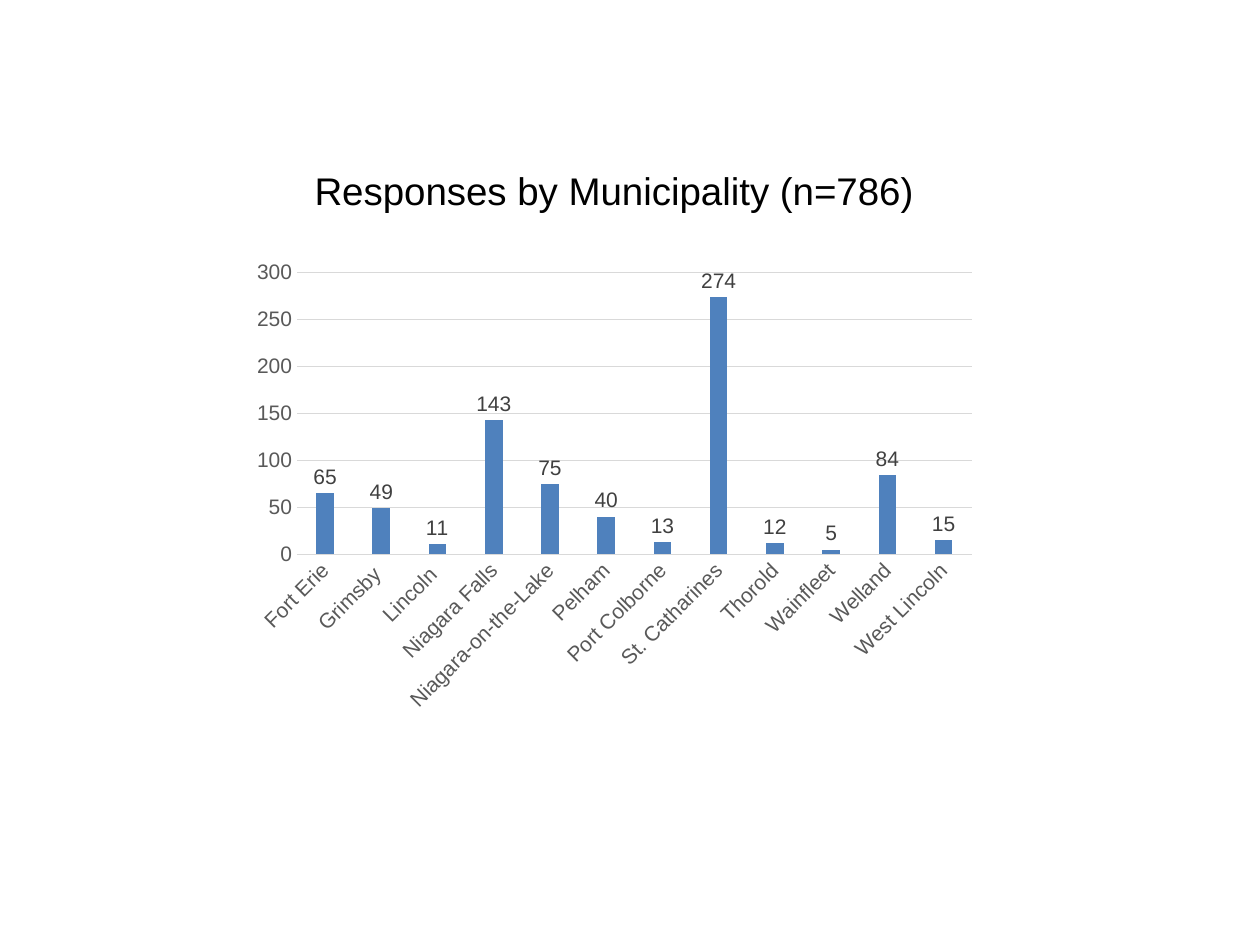
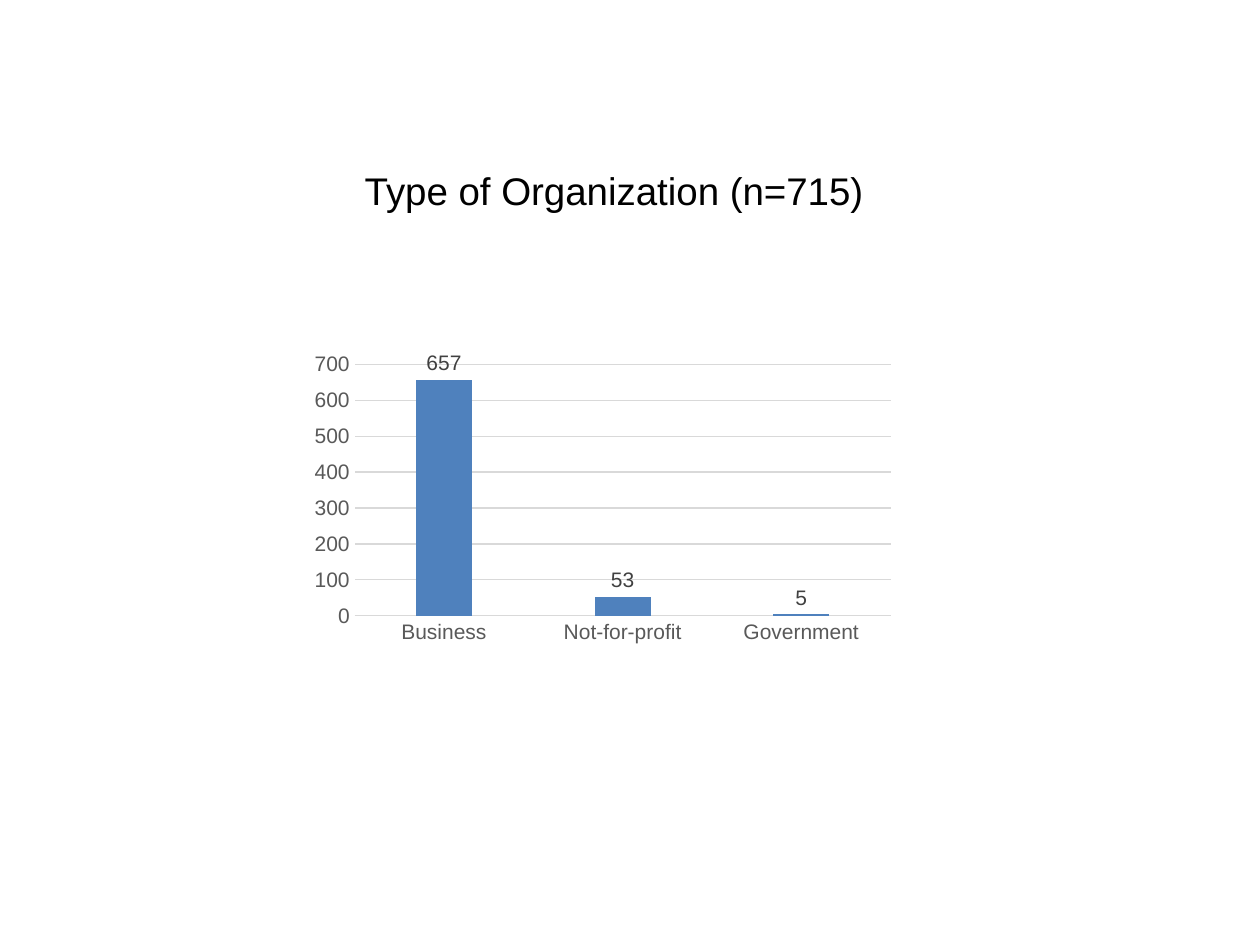
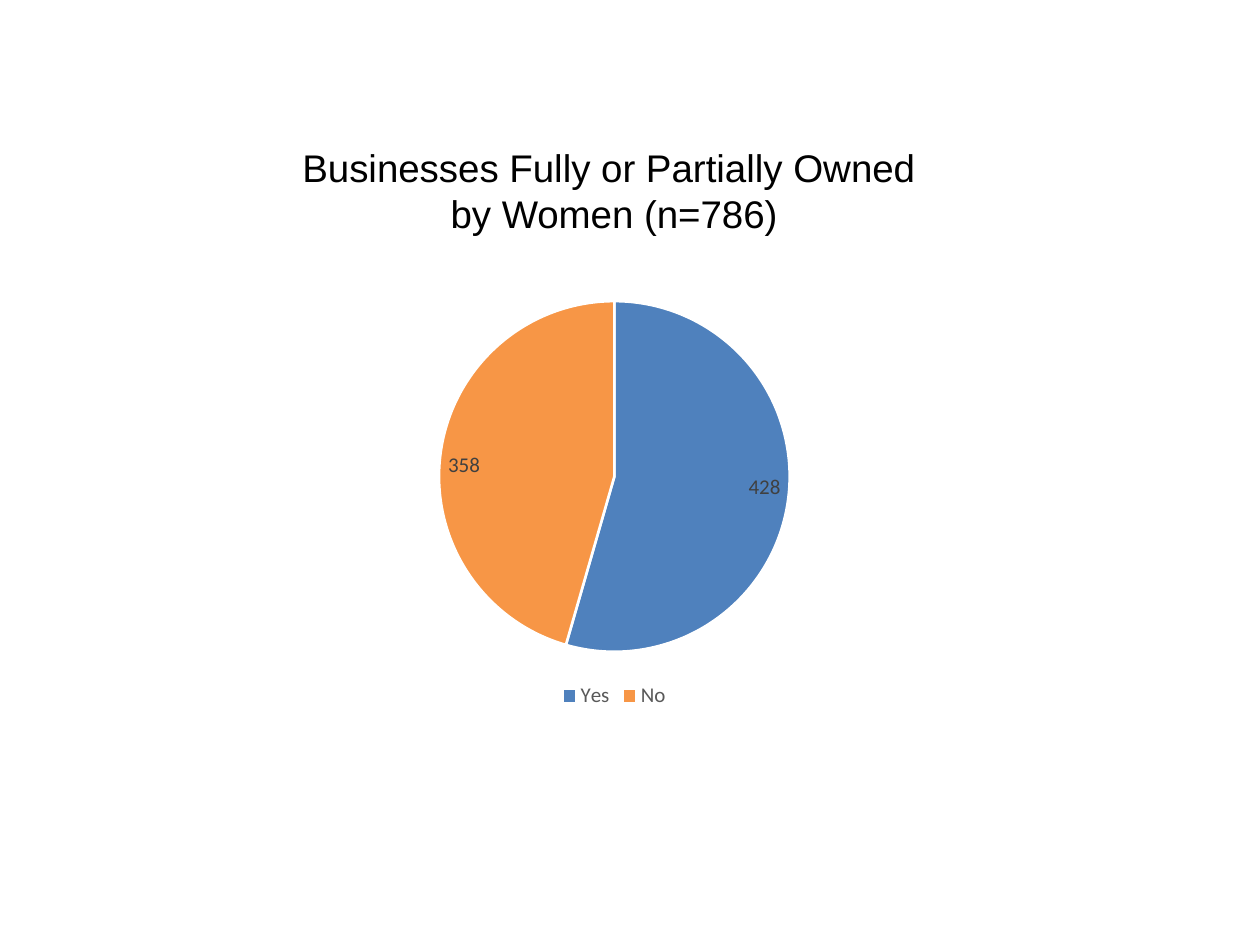
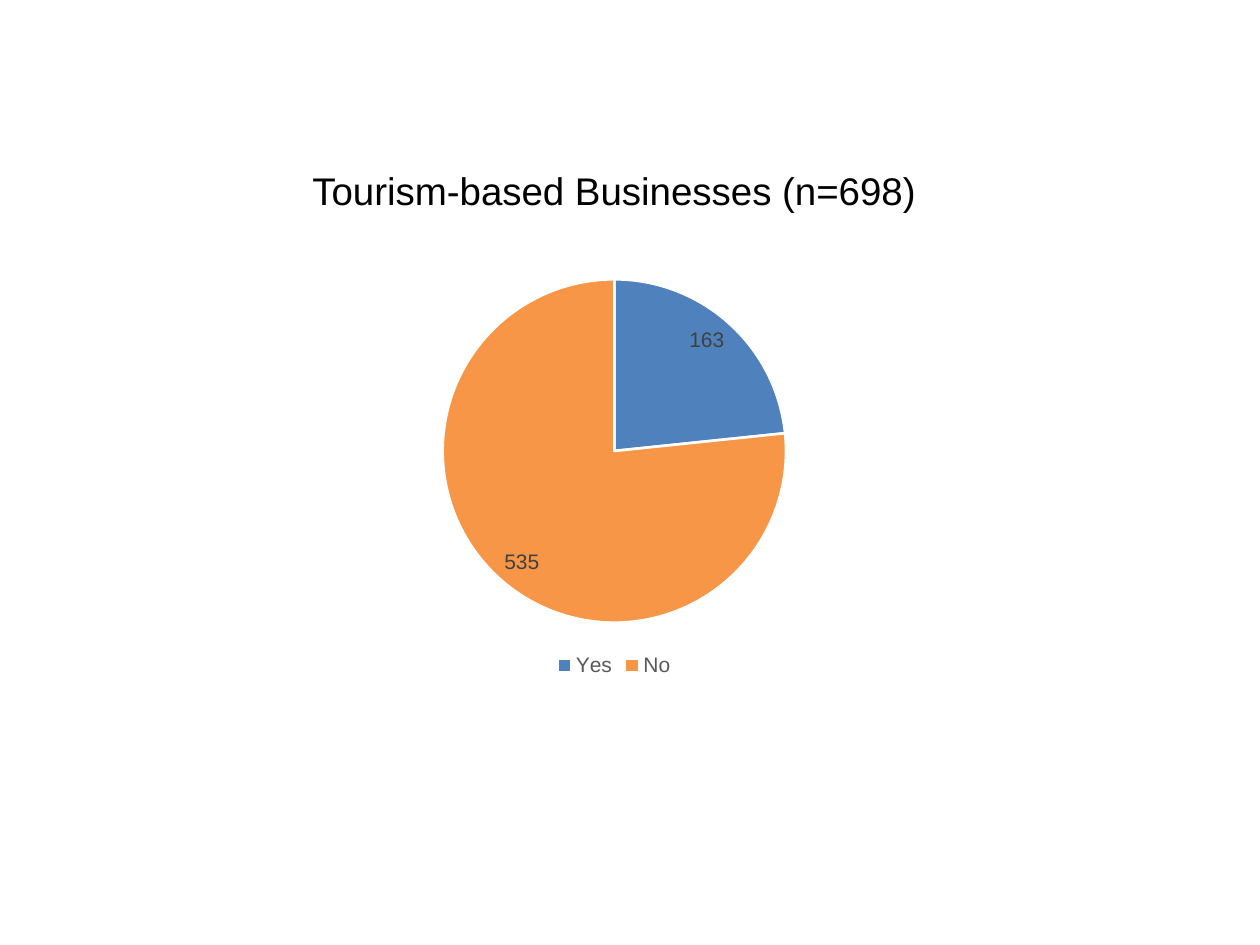
from lxml.etree import SubElement
from pptx import Presentation
from pptx.chart.data import CategoryChartData
from pptx.dml.color import RGBColor
from pptx.enum.chart import XL_CHART_TYPE, XL_LABEL_POSITION, XL_LEGEND_POSITION, XL_TICK_MARK
from pptx.enum.text import MSO_ANCHOR, MSO_AUTO_SIZE, PP_ALIGN
from pptx.oxml.ns import qn
from pptx.util import Cm, Pt

BLACK = RGBColor(0x00, 0x00, 0x00)
WHITE = RGBColor(0xFF, 0xFF, 0xFF)
BLUE = RGBColor(0x4F, 0x81, 0xBD)
ORANGE = RGBColor(0xF7, 0x96, 0x46)
LABEL_GREY = RGBColor(0x40, 0x40, 0x40)
AXIS_GREY = RGBColor(0x59, 0x59, 0x59)
GRID_GREY = RGBColor(0xD9, 0xD9, 0xD9)

TITLE_ONLY = 5
TITLE_CENTRE_X, TITLE_CENTRE_Y = 12.38, 3.83


class SurveyDeck:
    """Holds the shared style and the current slide."""

    def __init__(self):
        self.prs = Presentation()
        self.prs.slide_width, self.prs.slide_height = Cm(25.4), Cm(19.05)
        self.s = None

    def style_font(self, font, color, size=12, name="Arial"):
        for key, value in {"size": Pt(size), "name": name, "bold": False}.items():
            setattr(font, key, value)
        font.color.rgb = color

    def style_line(self, line, color, width):
        line.color.rgb = color
        line.width = Pt(width)

    def slide(self, lines, width, height=1.19):
        """Start a slide whose title is centred on the shared point."""
        self.s = self.prs.slides.add_slide(self.prs.slide_layouts[TITLE_ONLY])
        self.s.background.fill.solid()
        self.s.background.fill.fore_color.rgb = WHITE
        title = self.s.shapes.title
        box = {"left": Cm(TITLE_CENTRE_X - width / 2), "top": Cm(TITLE_CENTRE_Y - height / 2),
               "width": Cm(width), "height": Cm(height)}
        for key, value in box.items():
            setattr(title, key, value)
        tf = title.text_frame
        frame = {"word_wrap": False, "auto_size": MSO_AUTO_SIZE.SHAPE_TO_FIT_TEXT,
                 "vertical_anchor": MSO_ANCHOR.MIDDLE}
        for key, value in frame.items():
            setattr(tf, key, value)
        p = tf.paragraphs[0]
        p.alignment = PP_ALIGN.CENTER
        for i, line in enumerate(lines):
            if i:
                p.add_line_break()
            r = p.add_run()
            r.text = line
            self.style_font(r.font, BLACK, 22)

    def chart(self, kind, box, values, label_position, size=12, font="Arial"):
        """Add a one-series chart with value labels."""
        data = CategoryChartData()
        data.categories = list(values)
        data.add_series("Series 1", list(values.values()))
        chart = self.s.shapes.add_chart(kind, *map(Cm, box), data).chart
        chart.has_title = False
        chart.has_legend = False
        self.style_font(chart.font, BLACK, size, font)
        plot = chart.plots[0]
        plot.has_data_labels = True
        labels = plot.data_labels
        labels.show_value = True
        labels.show_percentage = False
        labels.position = label_position
        self.style_font(labels.font, LABEL_GREY, name=font)
        return chart, plot

    def columns(self, box, values, top, step, layout=None):
        chart, plot = self.chart(XL_CHART_TYPE.COLUMN_CLUSTERED, box, values,
                                 XL_LABEL_POSITION.OUTSIDE_END)
        for key, value in {"gap_width": 219, "overlap": -27, "vary_by_categories": False}.items():
            setattr(plot, key, value)
        fill = plot.series[0].format.fill
        fill.solid()
        fill.fore_color.rgb = BLUE

        # Axes and gridlines
        for axis in (chart.category_axis, chart.value_axis):
            axis.major_tick_mark = axis.minor_tick_mark = XL_TICK_MARK.NONE
            self.style_font(axis.tick_labels.font, AXIS_GREY)
        self.style_line(chart.category_axis.format.line, GRID_GREY, 0.75)
        axis = chart.value_axis
        scale = {"minimum_scale": 0, "maximum_scale": top, "major_unit": step,
                 "has_major_gridlines": True}
        for key, value in scale.items():
            setattr(axis, key, value)
        axis.format.line.fill.background()
        self.style_line(axis.major_gridlines.format.line, GRID_GREY, 0.75)
        if layout:
            self.place_plot(chart, layout)

    def place_plot(self, chart, layout):
        """Fix the inner plot area as fractions of the chart."""
        area = chart.element.find(".//" + qn("c:plotArea"))
        for old in area.findall(qn("c:layout")):
            area.remove(old)
        holder = SubElement(area, qn("c:layout"))
        area.insert(0, holder)
        manual = SubElement(holder, qn("c:manualLayout"))
        settings = {"layoutTarget": "inner", "xMode": "edge", "yMode": "edge",
                    **dict(zip("xywh", layout))}
        for tag, value in settings.items():
            SubElement(manual, qn("c:" + tag)).set("val", str(value))

    def pie(self, box, values, size=12, font="Arial"):
        chart, plot = self.chart(XL_CHART_TYPE.PIE, box, values,
                                 XL_LABEL_POSITION.INSIDE_END, size, font)
        plot.vary_by_categories = True
        for i, color in enumerate((BLUE, ORANGE)):
            fmt = plot.series[0].points[i].format
            fmt.fill.solid()
            fmt.fill.fore_color.rgb = color
            self.style_line(fmt.line, WHITE, 1.5)
        chart.has_legend = True
        chart.legend.position = XL_LEGEND_POSITION.BOTTOM
        chart.legend.include_in_layout = False
        self.style_font(chart.legend.font, AXIS_GREY, name=font)


def main():
    deck = SurveyDeck()

    # Responses by municipality
    deck.slide(["Responses by Municipality (n=786)"], 12.75)
    deck.columns((4.88, 5.08, 15.01, 9.45), {
        "Fort Erie": 65, "Grimsby ": 49, "Lincoln ": 11, "Niagara Falls": 143,
        "Niagara-on-the-Lake": 75, "Pelham": 40, "Port Colborne": 13,
        "St. Catharines": 274, "Thorold": 12, "Wainfleet": 5, "Welland": 84,
        "West Lincoln": 15}, top=300, step=50)

    # Type of organization
    deck.slide(["Type of Organization (n=715)"], 10.69)
    deck.columns((6.3, 6.15, 12.14, 7.04),
                 {"Business": 657, "Not-for-profit": 53, "Government": 5},
                 top=700, step=100, layout=(0.07, 0.17, 0.89, 0.72))

    # Ownership by women
    deck.slide(["Businesses Fully or Partially Owned ", "by Women (n=786)"], 13.23, 2.13)
    deck.pie((6.58, 5.72, 11.61, 8.66), {"Yes": 428, "No": 358}, 10, "Calibri")

    # Tourism-based businesses
    deck.slide(["Tourism-based Businesses (n=698)"], 12.83)
    deck.pie((6.15, 5.28, 12.47, 8.46), {"Yes": 163, "No": 535})

    deck.prs.save("out.pptx")


if __name__ == "__main__":
    main()
